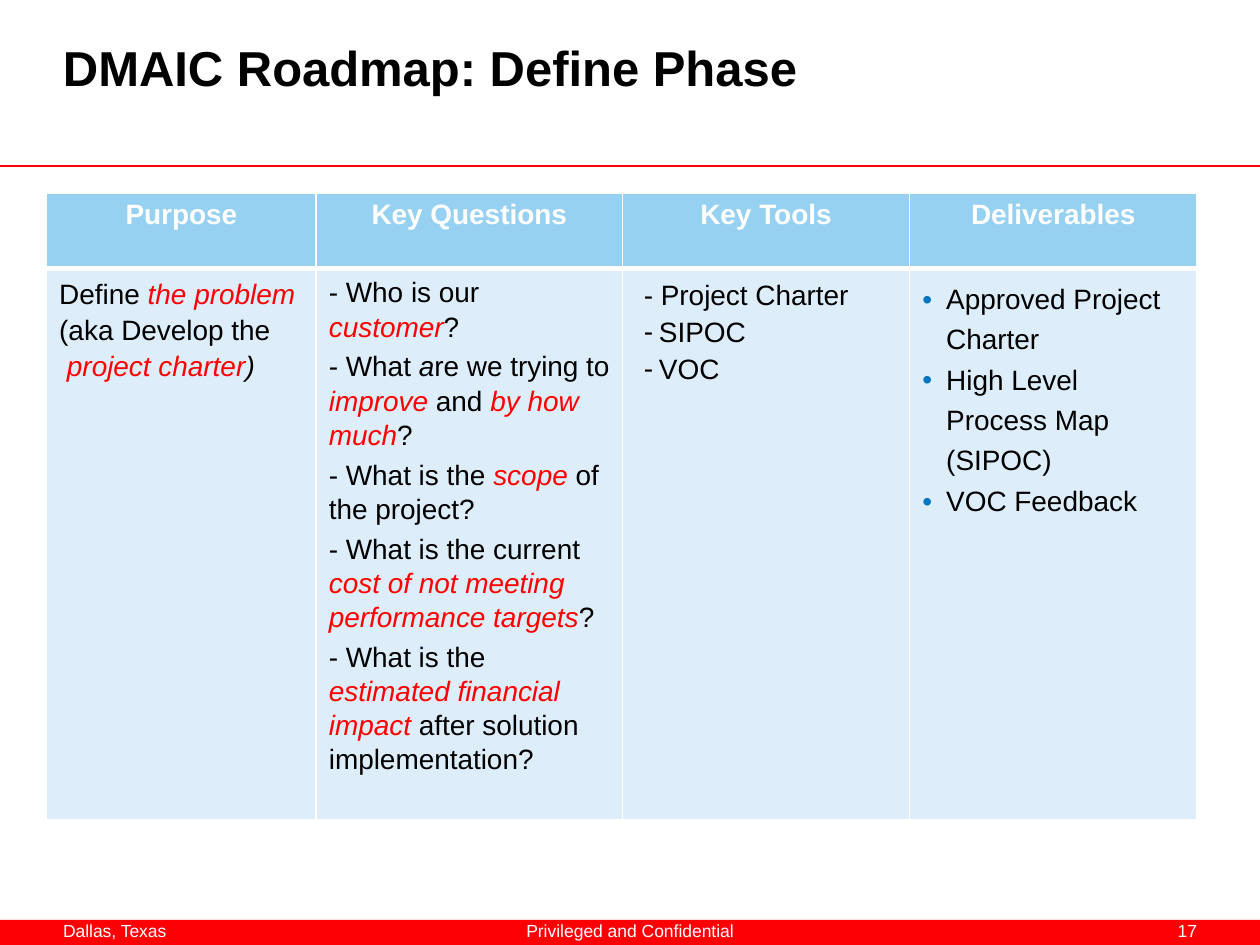
from lxml import etree
from pptx import Presentation
from pptx.dml.color import RGBColor
from pptx.enum.shapes import MSO_CONNECTOR, MSO_SHAPE
from pptx.enum.text import PP_ALIGN
from pptx.oxml.ns import qn
from pptx.util import Inches, Pt

BLANK_LAYOUT = 6
RECTANGLE = MSO_SHAPE.RECTANGLE
STRAIGHT = MSO_CONNECTOR.STRAIGHT
LEFT, CENTER, RIGHT = PP_ALIGN.LEFT, PP_ALIGN.CENTER, PP_ALIGN.RIGHT

WIDTH, HEIGHT = 10, 7.5
MARGIN = 0.05 * WIDTH
FOOTER_TOP, FOOTER_HEIGHT = 7.3, 0.2
RULE_TOP = 1.32
TABLE_LEFT, TABLE_TOP = 0.37, 1.53
COLUMN_WIDTHS = [2.14, 2.43, 2.28, 2.28]
ROW_HEIGHTS = [0.6, 4.07]

COLORS = {
    "brand": "FC0006",
    "accent": "FF0000",
    "black": "000000",
    "white": "FFFFFF",
    "header": "96D1F2",
    "body": "DDEEFA",
    "bullet": "0076BE",
}

STYLES = {
    "title": {"size": 28, "bold": True, "color": "black"},
    "footer": {"size": 10, "color": "white"},
    "header": {"size": 16, "bold": True, "color": "white"},
    "plain": {"size": 16, "bold": False, "italic": False, "color": "black"},
    "slanted": {"size": 16, "bold": False, "italic": True, "color": "black"},
    "key": {"size": 16, "bold": False, "italic": True, "color": "accent"},
    "problem": {"size": 16, "bold": False, "italic": True, "color": "brand"},
}

HEADERS = ["Purpose", "Key Questions", "Key Tools", "Deliverables"]
PURPOSE = [
    [("Define ", "plain"), ("the problem", "problem")],
    [("(aka Develop the", "plain")],
    [(" ", "plain"), ("project charter", "key"), (")", "slanted")],
]
QUESTIONS = [
    [("- Who is our ", "plain"), ("customer", "key"), ("?", "plain")],
    [("- What ", "plain"), ("a", "slanted"), ("re we trying to ", "plain"),
     ("improve", "key"), (" and", "plain"), (" by how much", "key"), ("?", "plain")],
    [("- What is the", "plain"), (" scope ", "key"), ("of the project?", "plain")],
    [("- What is the current ", "plain"),
     ("cost of not meeting performance targets", "key"), ("?", "plain")],
    [("- What is the ", "plain"), ("estimated financial impact", "key"),
     (" after solution implementation?", "plain")],
]
TOOLS_LEAD = [[("- Project Charter", "plain")]]
TOOLS = [[(name, "plain")] for name in ("SIPOC", "VOC")]
DELIVERABLES = [[(name, "plain")] for name in (
    "Approved Project Charter", "High Level Process Map (SIPOC)", "VOC Feedback")]


def rgb(name):
    return RGBColor.from_string(COLORS[name])


def add_solid_fill(parent, color):
    fill = etree.SubElement(parent, qn("a:solidFill"))
    etree.SubElement(fill, qn("a:srgbClr"), val=COLORS[color])


def add_run(paragraph, text, style):
    run = paragraph.add_run()
    run.text = text
    values = {"name": "Arial", **STYLES[style]}
    run.font.color.rgb = rgb(values.pop("color"))
    values["size"] = Pt(values["size"])
    for attribute, value in values.items():
        setattr(run.font, attribute, value)


def add_bullet(paragraph, character, indent, color, tab=None):
    properties = paragraph._p.get_or_add_pPr()
    properties.set("marL", str(Inches(indent)))
    properties.set("indent", str(-Inches(indent)))
    bullet_color = etree.SubElement(properties, qn("a:buClr"))
    etree.SubElement(bullet_color, qn("a:srgbClr"), val=COLORS[color])
    etree.SubElement(properties, qn("a:buFont"), typeface="Arial")
    etree.SubElement(properties, qn("a:buChar"), char=character)
    if tab:
        tabs = etree.SubElement(properties, qn("a:tabLst"))
        etree.SubElement(tabs, qn("a:tab"), pos=str(Inches(tab)), algn="l")


def write_paragraphs(frame, lines, formats, gap=0, bullet=None):
    for line in lines:
        is_first = not frame.paragraphs[0].runs
        paragraph = frame.paragraphs[0] if is_first else frame.add_paragraph()
        if bullet:
            add_bullet(paragraph, **bullet)
        if gap and not is_first:
            paragraph.space_before = Pt(gap)
        for attribute, value in formats.items():
            setattr(paragraph, attribute, value)
        for text, style in line:
            add_run(paragraph, text, style)


def add_text(slide, box, lines, formats, inset=(0, 0)):
    shape = slide.shapes.add_textbox(*map(Inches, box))
    frame = shape.text_frame
    horizontal, vertical = map(Inches, inset)
    settings = {
        "word_wrap": True,
        "margin_left": horizontal, "margin_right": horizontal,
        "margin_top": vertical, "margin_bottom": vertical,
    }
    for attribute, value in settings.items():
        setattr(frame, attribute, value)
    write_paragraphs(frame, lines, formats)
    return frame


def add_frame(slide):
    bar = slide.shapes.add_shape(
        RECTANGLE, 0, Inches(FOOTER_TOP), Inches(WIDTH), Inches(FOOTER_HEIGHT))
    bar.shadow.inherit = False
    bar.fill.solid()
    bar.fill.fore_color.rgb = rgb("brand")
    bar.line.fill.background()
    rule = slide.shapes.add_connector(
        STRAIGHT, 0, Inches(RULE_TOP), Inches(WIDTH), Inches(RULE_TOP))
    rule.line.color.rgb = rgb("brand")
    rule.line.width = Pt(1)
    etree.SubElement(rule._element.spPr, qn("a:effectLst"))


def add_footer(slide):
    for text, left, width, alignment in (
            ("Dallas, Texas", MARGIN, 1.19, LEFT),
            ("Privileged and Confidential", (WIDTH - 2.38) / 2, 2.38, CENTER),
            ("17", WIDTH - MARGIN - 0.85, 0.85, RIGHT)):
        add_text(slide, (left, FOOTER_TOP, width, FOOTER_HEIGHT),
                 [[(text, "footer")]], {"alignment": alignment})


def style_cell(cell, fill, top, bottom):
    properties = cell._tc.get_or_add_tcPr()
    for side, width in (("L", 1), ("R", 1), ("T", top), ("B", bottom)):
        border = etree.SubElement(properties, qn(f"a:ln{side}"), w=str(Pt(width)))
        add_solid_fill(border, "white")
    cell.fill.solid()
    cell.fill.fore_color.rgb = rgb(fill)


def add_roadmap(slide):
    table = slide.shapes.add_table(
        len(ROW_HEIGHTS), len(COLUMN_WIDTHS), Inches(TABLE_LEFT), Inches(TABLE_TOP),
        Inches(sum(COLUMN_WIDTHS)), Inches(sum(ROW_HEIGHTS))).table
    for column, width in zip(table.columns, COLUMN_WIDTHS):
        column.width = Inches(width)
    for row, height in zip(table.rows, ROW_HEIGHTS):
        row.height = Inches(height)
    for index, header in enumerate(HEADERS):
        style_cell(table.cell(0, index), "header", 1, 3)
        style_cell(table.cell(1, index), "body", 3, 1)
        write_paragraphs(table.cell(0, index).text_frame,
                         [[(header, "header")]], {"alignment": CENTER})
    purpose, questions, _, deliverables = [
        table.cell(1, index).text_frame for index in range(len(HEADERS))]
    write_paragraphs(purpose, PURPOSE, {"line_spacing": 1.15})
    write_paragraphs(questions, QUESTIONS, {"line_spacing": 1.1}, gap=3.2)
    write_paragraphs(
        deliverables, DELIVERABLES, {"line_spacing": 1.3},
        bullet={"character": "•", "indent": 0.19, "color": "bullet", "tab": 0.43})


def add_tools(slide):
    formats = {"line_spacing": 1.1}
    frame = add_text(slide, (5.05, 2.15, 2.15, 0.95), TOOLS_LEAD, formats, (0.06, 0.03))
    write_paragraphs(frame, TOOLS, formats,
                     bullet={"character": "-", "indent": 0.12, "color": "black"})


def main():
    presentation = Presentation()
    presentation.slide_width, presentation.slide_height = Inches(WIDTH), Inches(HEIGHT)
    slide = presentation.slides.add_slide(presentation.slide_layouts[BLANK_LAYOUT])
    add_frame(slide)
    add_footer(slide)
    add_text(slide, (MARGIN, 0.3, WIDTH - 2 * MARGIN, 1.03),
             [[("DMAIC Roadmap: Define Phase", "title")]], {"alignment": LEFT})
    add_roadmap(slide)
    add_tools(slide)
    presentation.save("out.pptx")


if __name__ == "__main__":
    main()
